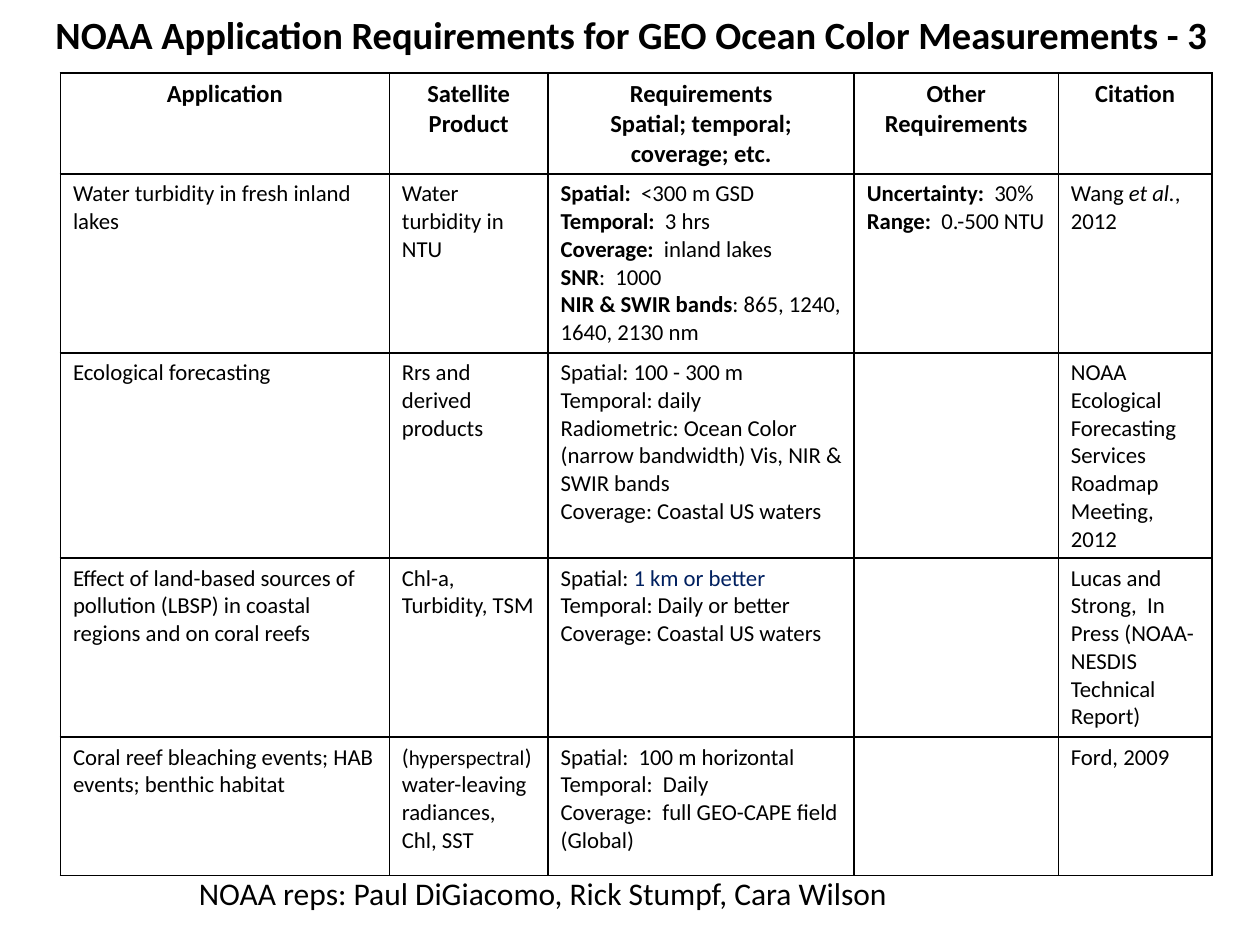
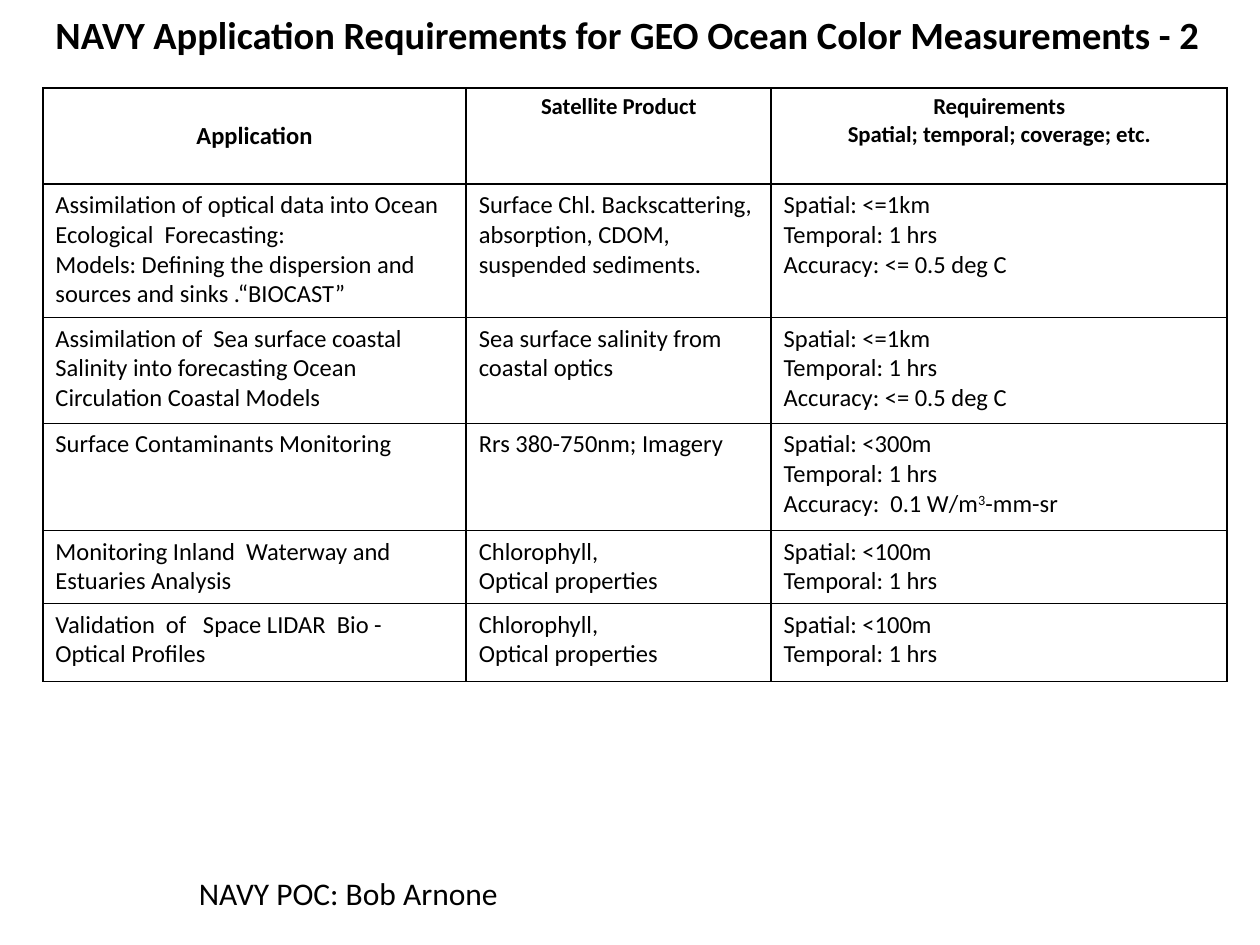
from dataclasses import dataclass

from lxml.etree import SubElement
from pptx import Presentation
from pptx.dml.color import RGBColor as Rgb
from pptx.enum.text import MSO_ANCHOR as Anchor, MSO_AUTO_SIZE as Fit, PP_ALIGN as Align
from pptx.oxml.ns import qn
from pptx.util import Pt

PX = 9144  # one px is a hundredth of an inch


@dataclass(frozen=True)
class Theme:
    font: str = "Calibri"
    ink: str = "000000"
    navy: str = "002060"
    title: int = 22
    foot: int = 18
    head: int = 14
    body: int = 13
    small: int = 12
    rule: int = 1


T = Theme()


# Text: a cell is a list of lines, a line is a list of runs,
# and a run is plain text or a pair of text and style.
def bold(text):
    return text, {"bold": True}


def pair(name, value):
    return [bold(name), value]


def as_list(part):
    return part if isinstance(part, list) else [part]


def add_run(para, run, size, strong):
    text, style = run if isinstance(run, tuple) else (run, {})
    piece = para.add_run()
    piece.text = text
    font = piece.font
    font.name = T.font
    font.size = Pt(style.get("size", size))
    font.bold = style.get("bold", strong)
    font.italic = style.get("italic", False)
    font.color.rgb = Rgb.from_string(style.get("ink", T.ink))
    if "raise" in style:
        piece._r.get_or_add_rPr().set("baseline", str(style["raise"] * 1000))


def write(frame, lines, size, strong=False, align=Align.LEFT):
    for i, line in enumerate(as_list(lines)):
        para = frame.add_paragraph() if i else frame.paragraphs[0]
        para.alignment = align
        for run in as_list(line):
            add_run(para, run, size, strong)


def set_label(shape, text, size, strong=False):
    frame = shape.text_frame
    frame.word_wrap = False
    frame.auto_size = Fit.SHAPE_TO_FIT_TEXT
    frame.vertical_anchor = Anchor.TOP
    write(frame, text, size, strong)


# Title and footer
def add_title(slide, box, text):
    shape = slide.shapes.title
    shape.left, shape.top, shape.width, shape.height = [n * PX for n in box]
    set_label(shape, text, T.title, True)


def add_foot(slide, box, text):
    shape = slide.shapes.add_textbox(*[n * PX for n in box])
    set_label(shape, text, T.foot)


# Table
def add_rules(cell):
    props = cell._tc.get_or_add_tcPr()
    for side in ("lnL", "lnR", "lnT", "lnB"):
        line = SubElement(props, qn(f"a:{side}"), w=str(Pt(T.rule)))
        fill = SubElement(line, qn("a:solidFill"))
        SubElement(fill, qn("a:srgbClr"), val=T.ink)


def set_cell(cell, lines, pad, top, size, head):
    cell.margin_left = cell.margin_right = 10 * PX
    cell.margin_top, cell.margin_bottom = top * PX, pad * PX
    cell.vertical_anchor = Anchor.TOP
    add_rules(cell)
    cell.fill.background()
    write(cell.text_frame, lines, size, head, Align.CENTER if head else Align.LEFT)


def add_grid(slide, spot, cols, rows, head, cells, body, heads, pad, drop):
    """heads: type size of each heading; drop: extra space above the first."""
    left, top = spot
    box = [n * PX for n in (left, top, sum(cols), sum(rows))]
    grid = slide.shapes.add_table(len(rows), len(cols), *box).table
    grid.first_row = grid.horz_banding = False
    for col, wide in zip(grid.columns, cols):
        col.width = wide * PX
    for row, high in zip(grid.rows, rows):
        row.height = high * PX
    for c, lines in enumerate(head):
        lead = pad if c else pad + drop
        set_cell(grid.cell(0, c), lines, pad, lead, heads[c], True)
    for r, row in enumerate(cells, 1):
        for c, lines in enumerate(row):
            set_cell(grid.cell(r, c), lines, 5, 5, body, False)


NEEDS = ["Requirements", "Spatial; temporal; coverage; etc."]
COAST = "Coverage: Coastal US waters"
FINE = ["Spatial: <=1km", "Temporal: 1 hrs", "Accuracy: <= 0.5 deg C"]
NEAR = ["Spatial: <100m", "Temporal: 1 hrs"]
OPTICS = ["Chlorophyll,", "Optical properties"]

NOAA = dict(
    spot=(48, 58),
    cols=(261, 126, 243, 162, 122),
    rows=(80, 142, 163, 142, 110),
    body=T.body, heads=[T.head] * 5, pad=5, drop=0,
    head=["Application", "Satellite Product", NEEDS, ["Other", "Requirements"],
          "Citation"],
    cells=[
        ["Water turbidity in fresh inland lakes",
         "Water turbidity in NTU",
         [pair("Spatial:", "  <300 m GSD"),
          pair("Temporal:", "  3 hrs"),
          pair("Coverage:", "  inland lakes"),
          pair("SNR", ":  1000"),
          pair("NIR & SWIR bands", ": 865, 1240, 1640, 2130 nm")],
         [pair("Uncertainty:  ", "30%"), pair("Range:  ", "0.-500 NTU")],
         [["Wang ", ("et al.", {"italic": True}), ", 2012"]]],
        ["Ecological forecasting",
         "Rrs and derived products",
         ["Spatial: 100 - 300 m",
          "Temporal: daily",
          "Radiometric: Ocean Color (narrow bandwidth) Vis, NIR & SWIR bands",
          COAST],
         [],
         "NOAA Ecological Forecasting Services Roadmap Meeting, 2012"],
        ["Effect of land-based sources of pollution (LBSP) in coastal regions "
         "and on coral reefs",
         "Chl-a, Turbidity, TSM",
         [["Spatial: ", ("1 km or better", {"ink": T.navy})],
          "Temporal: Daily or better",
          COAST],
         [],
         "Lucas and Strong,  In Press (NOAA-NESDIS Technical Report)"],
        ["Coral reef bleaching events; HAB events; benthic habitat",
         [["(", ("hyperspectral", {"size": T.small}),
           ") water-leaving radiances, Chl, SST"]],
         ["Spatial:  100 m horizontal",
          "Temporal:  Daily",
          "Coverage:  full GEO-CAPE field (Global)"],
         [],
         "Ford, 2009"],
    ],
)

NAVY = dict(
    spot=(34, 70),
    cols=(336, 242, 362),
    rows=(76, 106, 84, 85, 58, 62),
    body=T.head, heads=[T.head, T.body, T.body], pad=4, drop=22,
    head=["Application", "Satellite Product", NEEDS],
    cells=[
        [["Assimilation of optical data into Ocean Ecological  Forecasting:",
          "Models: Defining the dispersion and sources and sinks .“BIOCAST”"],
         "Surface Chl. Backscattering,  absorption, CDOM, suspended sediments.",
         FINE],
        ["Assimilation of  Sea surface coastal Salinity into forecasting Ocean "
         "Circulation Coastal Models",
         "Sea surface salinity from coastal optics",
         FINE],
        ["Surface Contaminants Monitoring",
         "Rrs 380-750nm; Imagery",
         ["Spatial: <300m",
          "Temporal: 1 hrs",
          ["Accuracy:  0.1 W/m", ("3", {"raise": 30}), "-mm-sr"]]],
        ["Monitoring Inland  Waterway and Estuaries Analysis", OPTICS, NEAR],
        ["Validation  of   Space LIDAR  Bio - Optical Profiles", OPTICS, NEAR],
    ],
)


def add_page(deck, who, part, grid, foot, wide):
    slide = deck.slides.add_slide(deck.slide_layouts[5])
    add_grid(slide, **grid)
    add_title(slide, (34, 4, 945, 47),
              f"{who} Application Requirements for GEO Ocean Color Measurements - {part}")
    add_foot(slide, (148, 689, wide, 40), foot)


def main():
    deck = Presentation()
    deck.slide_width, deck.slide_height = 1000 * PX, 750 * PX
    add_page(deck, "NOAA", 3, NOAA,
             "NOAA reps: Paul DiGiacomo, Rick Stumpf, Cara Wilson", 576)
    add_page(deck, "NAVY", 2, NAVY, "NAVY POC: Bob Arnone", 261)
    deck.save("out.pptx")


if __name__ == "__main__":
    main()
